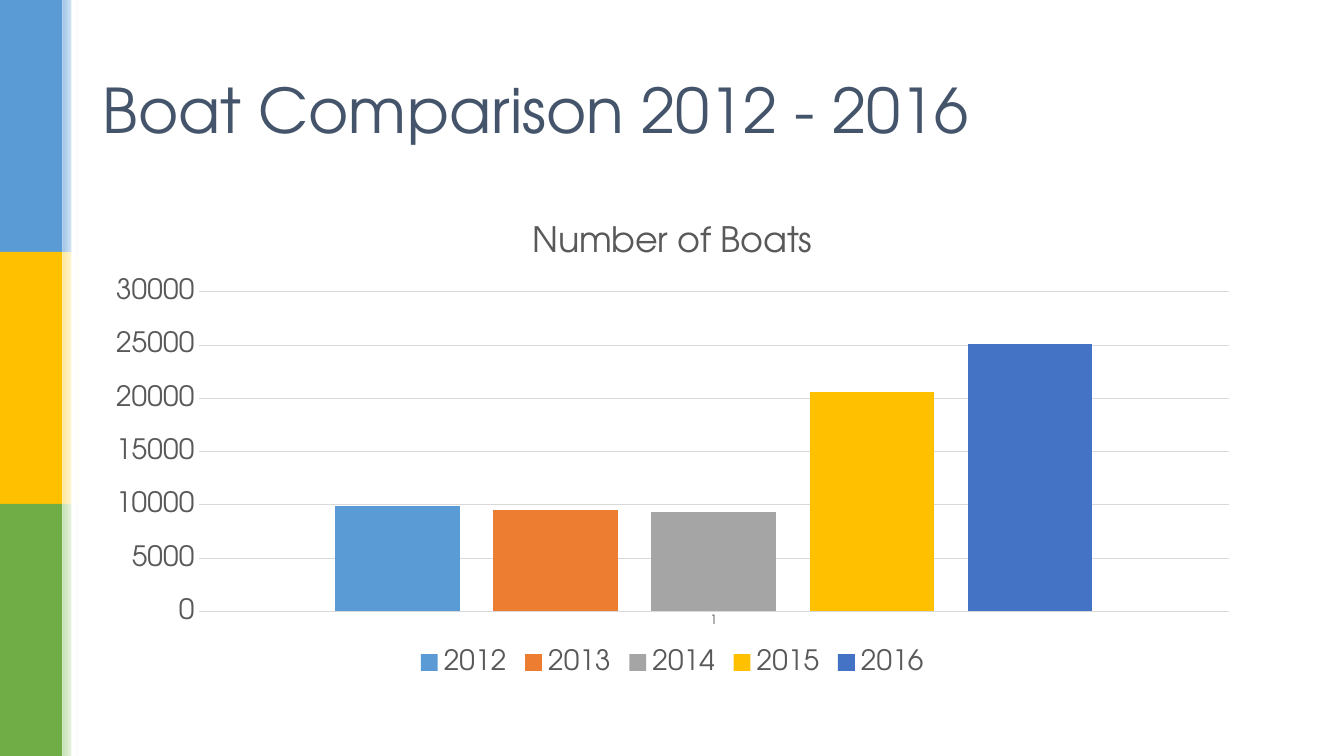
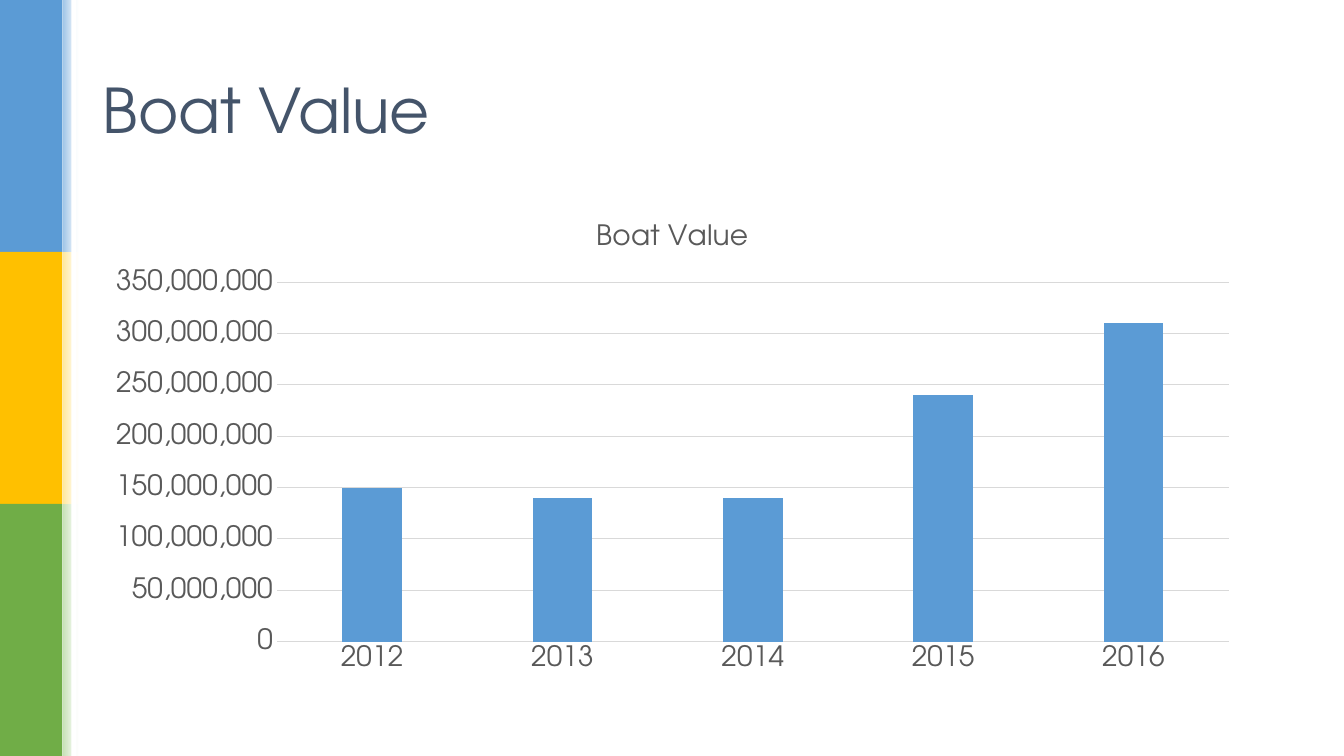
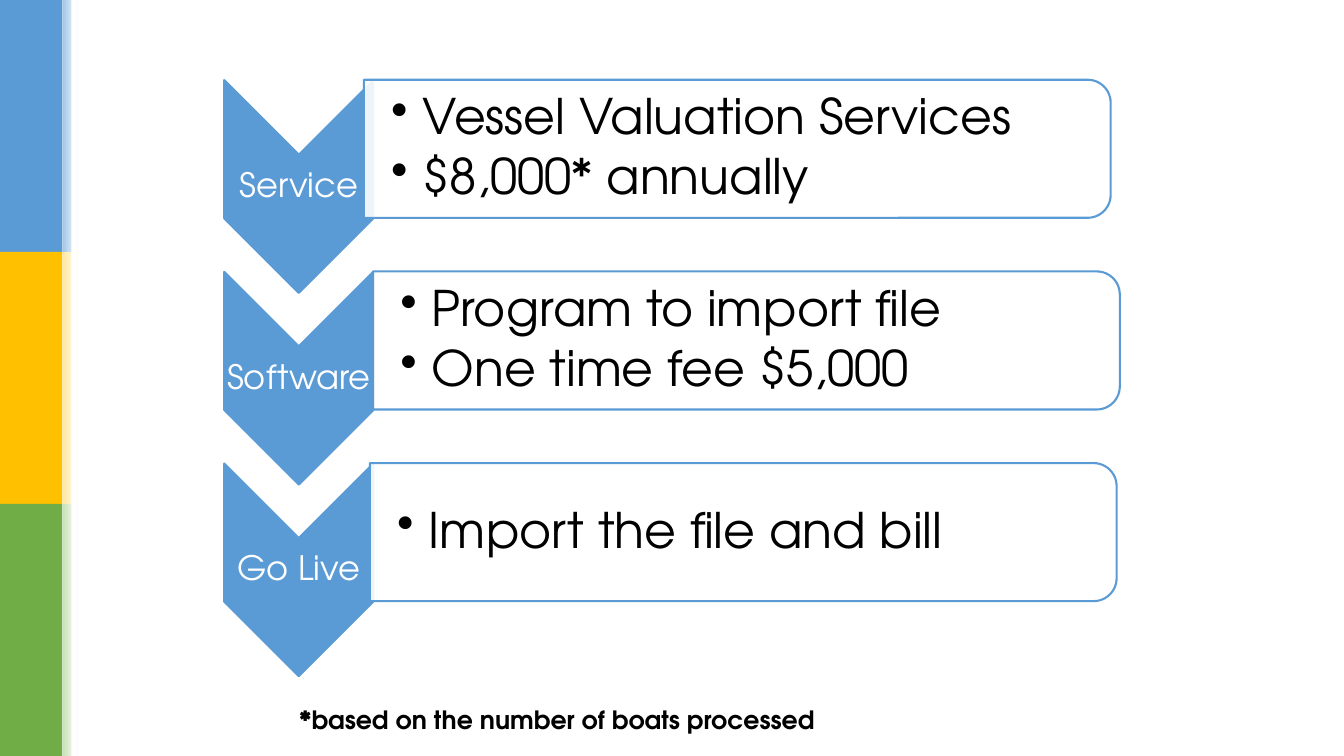
from pptx import Presentation
from pptx.chart.data import CategoryChartData
from pptx.dml.color import RGBColor
from pptx.enum.chart import XL_CHART_TYPE, XL_LEGEND_POSITION, XL_TICK_MARK
from pptx.enum.shapes import MSO_SHAPE
from pptx.enum.text import MSO_ANCHOR, PP_ALIGN
from pptx.oxml import parse_xml
from pptx.oxml.ns import nsdecls, qn
from pptx.oxml.xmlchemy import OxmlElement
from pptx.util import Cm, Pt

FONT = "TeX Gyre Adventor"
BLUE = RGBColor(0x5B, 0x9B, 0xD5)
ORANGE = RGBColor(0xED, 0x7D, 0x31)
GRAY = RGBColor(0xA5, 0xA5, 0xA5)
GOLD = RGBColor(0xFF, 0xC0, 0x00)
ROYAL = RGBColor(0x44, 0x72, 0xC4)
GREEN = RGBColor(0x70, 0xAD, 0x47)
PALE_BLUE = RGBColor(0x9D, 0xC3, 0xE6)
PALE_GOLD = RGBColor(0xFF, 0xE6, 0x99)
PALE_GREEN = RGBColor(0xC5, 0xE0, 0xB4)
SLATE = RGBColor(0x44, 0x54, 0x6A)
CHART_TEXT = RGBColor(0x59, 0x59, 0x59)
GRID = RGBColor(0xD9, 0xD9, 0xD9)
WHITE = RGBColor(0xFF, 0xFF, 0xFF)
BLACK = RGBColor(0x00, 0x00, 0x00)

PAGE_WIDTH, PAGE_HEIGHT = 33.87, 19.05
BANDS = [(BLUE, PALE_BLUE), (GOLD, PALE_GOLD), (GREEN, PALE_GREEN)]


def style_font(font, size, color, bold=False):
    font.name, font.size, font.bold = FONT, Pt(size), bold
    font.color.rgb = color


class Slides:
    """The deck, its style and the slide being built."""

    def __init__(self):
        self.deck = Presentation()
        self.deck.slide_width = Cm(PAGE_WIDTH)
        self.deck.slide_height = Cm(PAGE_HEIGHT)
        self.page = None

    def new_page(self, title=None):
        self.page = self.deck.slides.add_slide(self.deck.slide_layouts[6])
        self.side_bands()
        if title:
            self.text([title], 2.34, 1.02, 29.21, 3.68, 44, SLATE,
                      anchor=MSO_ANCHOR.MIDDLE, spacing=0.9)

    def shape(self, kind, left, top, width, height, fill=None, line=None):
        shape = self.page.shapes.add_shape(
            kind, Cm(left), Cm(top), Cm(width), Cm(height))
        shape.shadow.inherit = False
        if fill is not None:
            shape.fill.solid()
            shape.fill.fore_color.rgb = fill
        if line is None:
            shape.line.fill.background()
        else:
            shape.line.color.rgb = line
            shape.line.width = Pt(1.5)
        return shape

    def upright(self, kind, center_x, center_y, width, height, fill):
        """A shape turned a quarter, given by its size as seen."""
        shape = self.shape(kind, center_x - height / 2, center_y - width / 2,
                           height, width, fill, BLUE)
        shape.rotation = 90
        return shape

    def side_bands(self):
        band_height = PAGE_HEIGHT / len(BANDS)
        for row, (color, pale) in enumerate(BANDS):
            top = row * band_height
            self.shape(MSO_SHAPE.RECTANGLE, 0, top, 1.57, band_height, color)
            fade = self.shape(MSO_SHAPE.RECTANGLE, 1.57, top, 0.41, band_height)
            fade.fill.gradient()
            fade.fill.gradient_angle = 0
            for stop, shade in zip(fade.fill.gradient_stops, (pale, WHITE)):
                stop.color.rgb = shade
        self.shape(MSO_SHAPE.RECTANGLE, 1.8, 0, 0.13, PAGE_HEIGHT, WHITE)

    def text(self, lines, left, top, width, height, size, color, bold=False,
             align=PP_ALIGN.LEFT, anchor=MSO_ANCHOR.TOP, spacing=1.0,
             after=0, insets=(0.25, 0.13, 0.25, 0.13), bullet=False):
        box = self.page.shapes.add_textbox(
            Cm(left), Cm(top), Cm(width), Cm(height))
        frame = box.text_frame
        frame.word_wrap = True
        frame.vertical_anchor = anchor
        (frame.margin_left, frame.margin_top,
         frame.margin_right, frame.margin_bottom) = map(Cm, insets)
        for number, line in enumerate(lines):
            para = frame.paragraphs[0] if number == 0 else frame.add_paragraph()
            para.text = line
            para.alignment = align
            para.line_spacing = spacing
            para.space_after = Pt(after)
            if bullet:
                self.bullet(para)
            style_font(para.font, size, color, bold)
        return box

    def bullet(self, para):
        properties = para._p.get_or_add_pPr()
        properties.set("marL", str(Cm(0.79)))
        properties.set("indent", str(-Cm(0.79)))
        mark = OxmlElement("a:buChar")
        mark.set("char", "•")
        properties.append(mark)

    def column_chart(self, title, title_size, categories, series,
                     category_size, number_format, legend):
        data = CategoryChartData()
        data.categories = categories
        for name, values, _ in series:
            data.add_series(name, values)
        chart = self.page.shapes.add_chart(
            XL_CHART_TYPE.COLUMN_CLUSTERED,
            Cm(2.34), Cm(5.08), Cm(29.21), Cm(12.09), data).chart
        style_font(chart.font, 10, BLACK)

        # Title and legend
        chart.has_title = True
        heading = chart.chart_title.text_frame
        heading.text = title
        style_font(heading.paragraphs[0].font, title_size, CHART_TEXT)
        chart.has_legend = legend
        if legend:
            chart.legend.position = XL_LEGEND_POSITION.BOTTOM
            chart.legend.include_in_layout = False
            style_font(chart.legend.font, 20, CHART_TEXT)

        # Columns
        plot = chart.plots[0]
        plot.gap_width, plot.overlap = 219, -27
        plot.vary_by_categories = False
        for column, (_, _, color) in zip(plot.series, series):
            column.format.fill.solid()
            column.format.fill.fore_color.rgb = color

        # Axes
        for axis, size in ((chart.category_axis, category_size),
                           (chart.value_axis, 20)):
            axis.major_tick_mark = axis.minor_tick_mark = XL_TICK_MARK.NONE
            style_font(axis.tick_labels.font, size, CHART_TEXT)
        chart.value_axis.format.line.fill.background()
        chart.value_axis.tick_labels.number_format = number_format
        chart.value_axis.tick_labels.number_format_is_linked = False
        for line in (chart.category_axis.format.line,
                     chart.value_axis.major_gridlines.format.line):
            line.color.rgb = GRID
            line.width = Pt(0.75)

    def step(self, label, lines, center_y, card_left):
        """A chevron with its label, and a card of bullets beside it."""
        chevron_x, chevron_width = 7.53, 3.76
        self.upright(MSO_SHAPE.CHEVRON, chevron_x, center_y,
                     chevron_width, 5.36, BLUE)
        self.text([label], chevron_x - chevron_width / 2, center_y - 0.8,
                  chevron_width, 1.6, 24, WHITE, align=PP_ALIGN.CENTER,
                  anchor=MSO_ANCHOR.MIDDLE, spacing=0.9, after=8,
                  insets=(0.05,) * 4)

        card_y, card_width = center_y - 0.95, 18.82
        card = self.upright(MSO_SHAPE.ROUND_2_SAME_RECTANGLE,
                            card_left + card_width / 2, card_y,
                            card_width, 3.48, WHITE)
        alpha = OxmlElement("a:alpha")
        alpha.set("val", "90000")
        card._element.spPr.find(".//" + qn("a:srgbClr")).append(alpha)
        self.text(lines, card_left, card_y - 1.57, 18.64, 3.14, 35, BLACK,
                  anchor=MSO_ANCHOR.MIDDLE, spacing=0.9, after=5,
                  insets=(0.69, 0.05, 0.05, 0.05), bullet=True)

    def footnote(self, words):
        box = self.text([words], 7.29, 17.63, 20.35, 1.02, 18, BLACK, bold=True)
        span = box.text_frame.paragraphs[0].runs[0]
        span._r.get_or_add_rPr().insert(0, parse_xml(
            f'<a:ln {nsdecls("a")} w="9525"><a:solidFill>'
            '<a:srgbClr val="DEEBF7"/></a:solidFill></a:ln>'))


def main():
    slides = Slides()

    # Number of boats
    slides.new_page("Boat Comparison 2012 - 2016")
    slides.column_chart(
        "Number of Boats", 25, ["1"],
        [("2012", [9900], BLUE), ("2013", [9500], ORANGE),
         ("2014", [9300], GRAY), ("2015", [20600], GOLD),
         ("2016", [25100], ROYAL)],
        category_size=9, number_format="General", legend=True)

    # Value of boats
    slides.new_page("Boat Value")
    millions = [150, 140, 140, 240, 310]
    slides.column_chart(
        "Boat Value", 20, ["2012", "2013", "2014", "2015", "2016"],
        [("Series 1", [value * 1_000_000 for value in millions], BLUE)],
        category_size=20, number_format="#,##0", legend=False)

    # Steps and costs
    slides.new_page()
    steps = [
        ("Service", ["Vessel Valuation Services", "$8,000* annually"], 9.17),
        ("Software", ["Program to import file", "One time fee $5,000"], 9.4),
        ("Go Live", ["Import the file and bill"], 9.32),
    ]
    for row, (label, lines, card_left) in enumerate(steps):
        slides.step(label, lines, 4.7 + row * 4.83, card_left)
    slides.footnote("*based on the number of boats processed")

    slides.deck.save("out.pptx")


if __name__ == "__main__":
    main()
